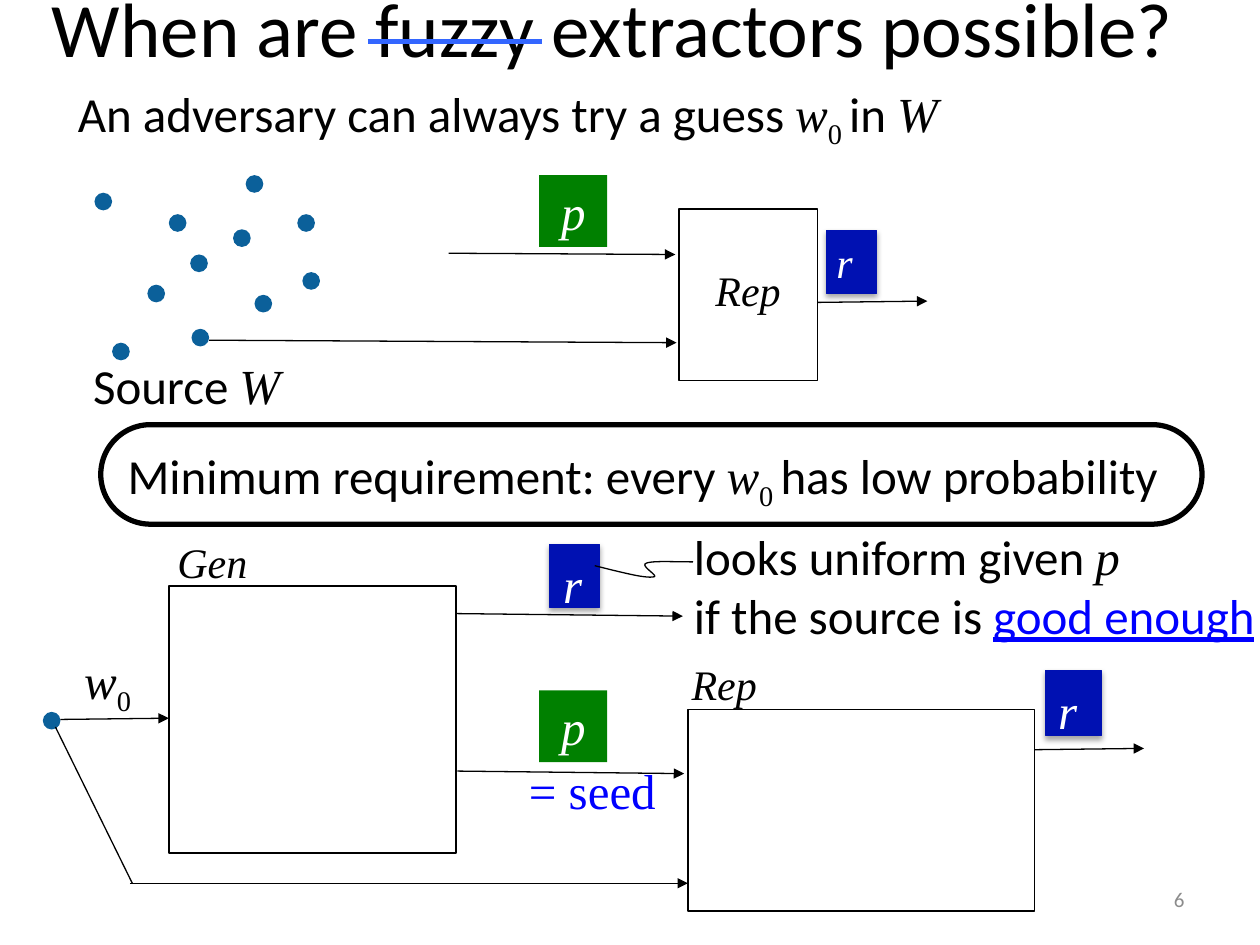
from pptx import Presentation
from pptx.dml.color import RGBColor as Rgb
from pptx.enum.shapes import MSO_CONNECTOR as Link, MSO_SHAPE as Form
from pptx.enum.text import MSO_ANCHOR as Anchor, MSO_AUTO_SIZE as Auto, PP_ALIGN as Align
from pptx.oxml import parse_xml
from pptx.oxml.ns import nsdecls, qn
from pptx.util import Pt

PX = 9144
HUES = {
    "ink": "000000", "white": "FFFFFF", "key": "0011B2", "help": "008000",
    "dot": "0B609A", "note": "0000FF", "strike": "3366FF", "page": "8C8C8C",
}
SANS, SERIF = "Calibri", "Times New Roman"
KINDS = {
    "text": (SANS, False, "ink"),
    "math": (SERIF, True, "ink"),
    "sub": (SERIF, False, "ink"),
    "tile": (SERIF, True, "white"),
    "seed": (SERIF, False, "note"),
    "link": (SANS, False, "note"),
    "page": (SANS, False, "page"),
}


class Deck:
    def __init__(self, wide, high):
        self.show = Presentation()
        self.show.slide_width = wide * PX
        self.show.slide_height = high * PX
        self.slide = self.show.slides.add_slide(self.show.slide_layouts[5])
        self.shapes = self.slide.shapes

    def hue(self, name):
        return Rgb.from_string(HUES[name])

    def place(self, x, y, w, h):
        return [n * PX for n in (x, y, w, h)]

    def fill_text(self, frame, runs, size, align=None):
        para = frame.paragraphs[0]
        para.alignment = align
        for kind, words in runs:
            if kind == "break":
                para.add_line_break()
                continue
            run = para.add_run()
            run.text = words
            font = run.font
            font.name, font.italic, hue = KINDS[kind]
            font.size = Pt(size)
            font.color.rgb = self.hue(hue)
            if kind == "link":
                font.underline = True
            if kind == "sub":
                run._r.get_or_add_rPr().set("baseline", "-25000")

    def title(self, box, words):
        shape = self.shapes.title
        shape.left, shape.top, shape.width, shape.height = self.place(*box)
        frame = shape.text_frame
        frame.auto_size = Auto.NONE
        frame.vertical_anchor = Anchor.MIDDLE
        self.fill_text(frame, [("text", words)], 44, Align.CENTER)

    def text(self, box, runs, size=28, wrap=False, align=None):
        frame = self.shapes.add_textbox(*self.place(*box)).text_frame
        frame.word_wrap = wrap
        frame.auto_size = Auto.SHAPE_TO_FIT_TEXT
        self.fill_text(frame, runs, size, align)

    def shape(self, box, form=Form.RECTANGLE, fill=None, line=None, wide=0.75):
        shape = self.shapes.add_shape(form, *self.place(*box))
        shape.shadow.inherit = False
        if fill:
            shape.fill.solid()
            shape.fill.fore_color.rgb = self.hue(fill)
        else:
            shape.fill.background()
        if line:
            shape.line.color.rgb = self.hue(line)
            shape.line.width = Pt(wide)
        else:
            shape.line.fill.background()
        return shape

    def key(self, box, spot, size=28):
        shape = self.shape(box, fill="key", line="key")
        shape._element.spPr.find(qn("a:effectLst")).append(parse_xml(
            f'<a:outerShdw {nsdecls("a")} blurRad="40000" dist="23000" dir="5400000" '
            'rotWithShape="0"><a:srgbClr val="000000"><a:alpha val="35000"/>'
            '</a:srgbClr></a:outerShdw>'))
        self.text(spot, [("tile", "r")], size)

    def help_tile(self, x, y):
        frame = self.shape((x, y, 54, 57), fill="help").text_frame
        frame.word_wrap = False
        frame.vertical_anchor = Anchor.TOP
        self.fill_text(frame, [("tile", "p")], 28, Align.CENTER)

    def pill(self, box, runs):
        shape = self.shape(box, Form.ROUNDED_RECTANGLE, line="ink", wide=3)
        shape.adjustments[0] = 0.5
        frame = shape.text_frame
        frame.word_wrap = True
        frame.vertical_anchor = Anchor.TOP
        self.fill_text(frame, runs, 28, Align.LEFT)

    def dot(self, x, y):
        self.shape((x, y, 14, 14), Form.OVAL, fill="dot")

    def line(self, ends, hue="ink", wide=0.75, head=True):
        link = self.shapes.add_connector(Link.STRAIGHT, *self.place(*ends))
        link.line.color.rgb = self.hue(hue)
        link.line.width = Pt(wide)
        props = link._element.spPr
        if head:
            props.find(qn("a:ln")).append(parse_xml(
                f'<a:tailEnd {nsdecls("a")} type="triangle" w="med" len="med"/>'))
        props.append(parse_xml(f'<a:effectLst {nsdecls("a")}/>'))

    def curve(self, start, bends, steps=12):
        pen = self.shapes.build_freeform(start[0] * PX, start[1] * PX)
        for bend in bends:
            knots = (start, *bend)
            spots = []
            for step in range(1, steps + 1):
                t = step / steps
                parts = ((1 - t) ** 3, 3 * t * (1 - t) ** 2, 3 * t * t * (1 - t), t ** 3)
                spots.append([round(sum(p * k[i] for p, k in zip(parts, knots)) * PX)
                              for i in (0, 1)])
            pen.add_line_segments(spots, close=False)
            start = bend[-1]
        shape = pen.convert_to_shape()
        shape.shadow.inherit = False
        shape.fill.background()
        shape.line.color.rgb = self.hue("ink")
        shape.line.width = Pt(0.75)

    def save(self):
        self.show.save("out.pptx")


def main():
    deck = Deck(1000, 750)
    deck.title((-54, -26, 1081, 94), "When are fuzzy extractors possible?")
    deck.line((292, 33, 430, 33), "strike", 3, head=False)
    deck.text((52, 61, 935, 57), [
        ("text", "An adversary can always try a guess "), ("math", "w"),
        ("sub", "0 "), ("text", "in "), ("math", "W")], wrap=True)

    dots = [(236, 170), (134, 170), (75, 153), (89, 272), (195, 139), (202, 234),
            (117, 226), (152, 261), (151, 202), (185, 182), (240, 216), (34, 565)]
    for spot in dots:
        deck.dot(*spot)
    deck.text((64, 277, 203, 57), [("text", "Source "), ("math", "W")], wrap=True)

    for box in [(539, 166, 110, 136), (134, 465, 228, 212), (546, 563, 275, 160)]:
        deck.shape(box, line="ink")
    names = [("Rep", (558, 205, 83, 50)), ("Gen", (131, 421, 87, 50)),
             ("Rep", (539, 518, 84, 50))]
    for name, box in names:
        deck.text(box, [("math", name)], 24)

    arrows = [(356, 201, 536, 202), (166, 270, 537, 272), (649, 240, 736, 239),
              (48, 571, 134, 570), (362, 487, 542, 489), (363, 612, 543, 614),
              (103, 701, 546, 701), (821, 595, 908, 594)]
    for ends in arrows:
        deck.line(ends)
    deck.line((105, 701, 44, 577), head=False)

    deck.help_tile(428, 139)
    deck.help_tile(428, 548)
    deck.key((656, 183, 40, 50), (654, 183, 44, 50), 24)
    deck.key((436, 432, 40, 50), (437, 435, 49, 57))
    deck.key((830, 532, 44, 52), (830, 535, 49, 57))

    deck.pill((80, 337, 874, 79), [
        ("text", "Minimum requirement: every "), ("math", "w"),
        ("sub", "0 "), ("text", "has low probability")])
    deck.text((541, 413, 734, 104), [
        ("text", "looks uniform given "), ("math", "p"), ("break", ""),
        ("text", "if the source is "), ("link", "good enough")], wrap=True)
    deck.curve((550, 446), [
        ((534, 446), (518, 445), (513, 447)),
        ((507, 449), (525, 458), (518, 458)),
        ((511, 459), (492, 454), (472, 449))])
    deck.text((57, 511, 64, 57), [("math", "w"), ("sub", "0")])
    deck.text((410, 599, 123, 57), [("seed", "= seed")])
    deck.text((717, 699, 233, 40), [("page", "6")], 12, True, Align.RIGHT)
    deck.save()


if __name__ == "__main__":
    main()
